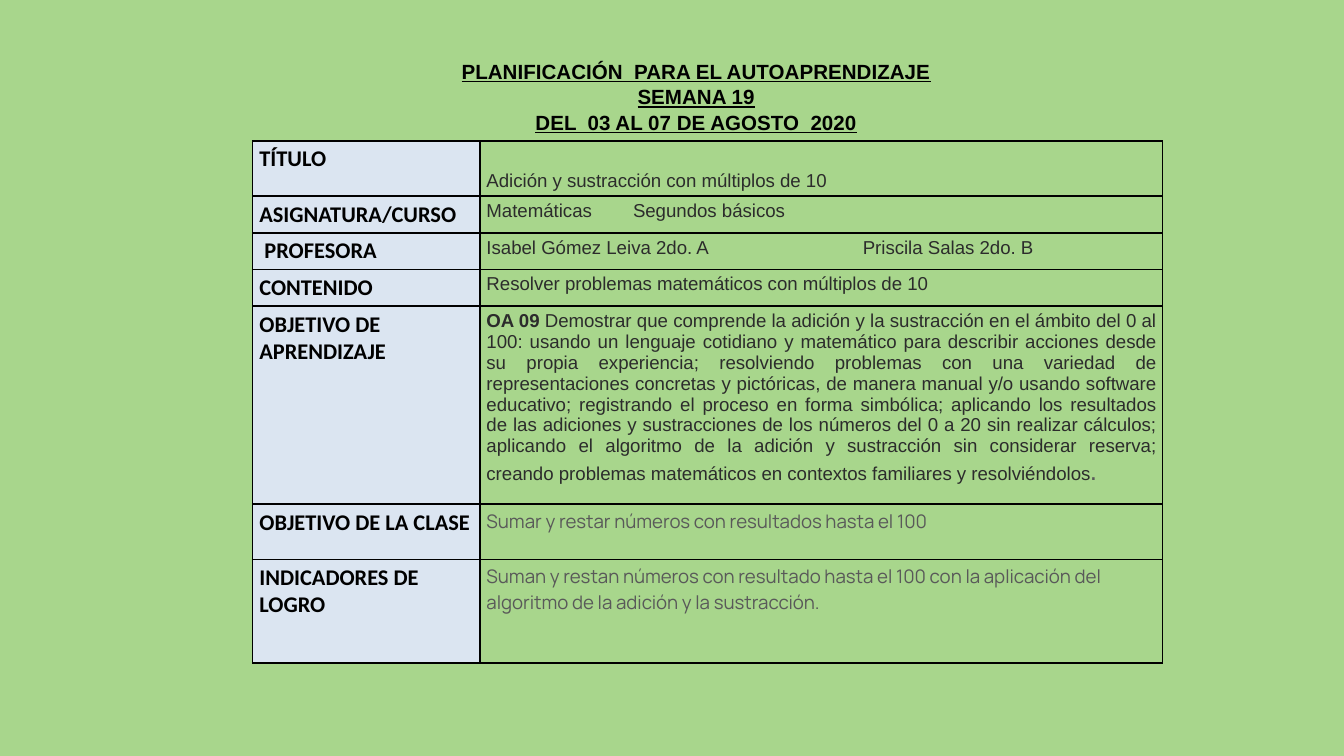
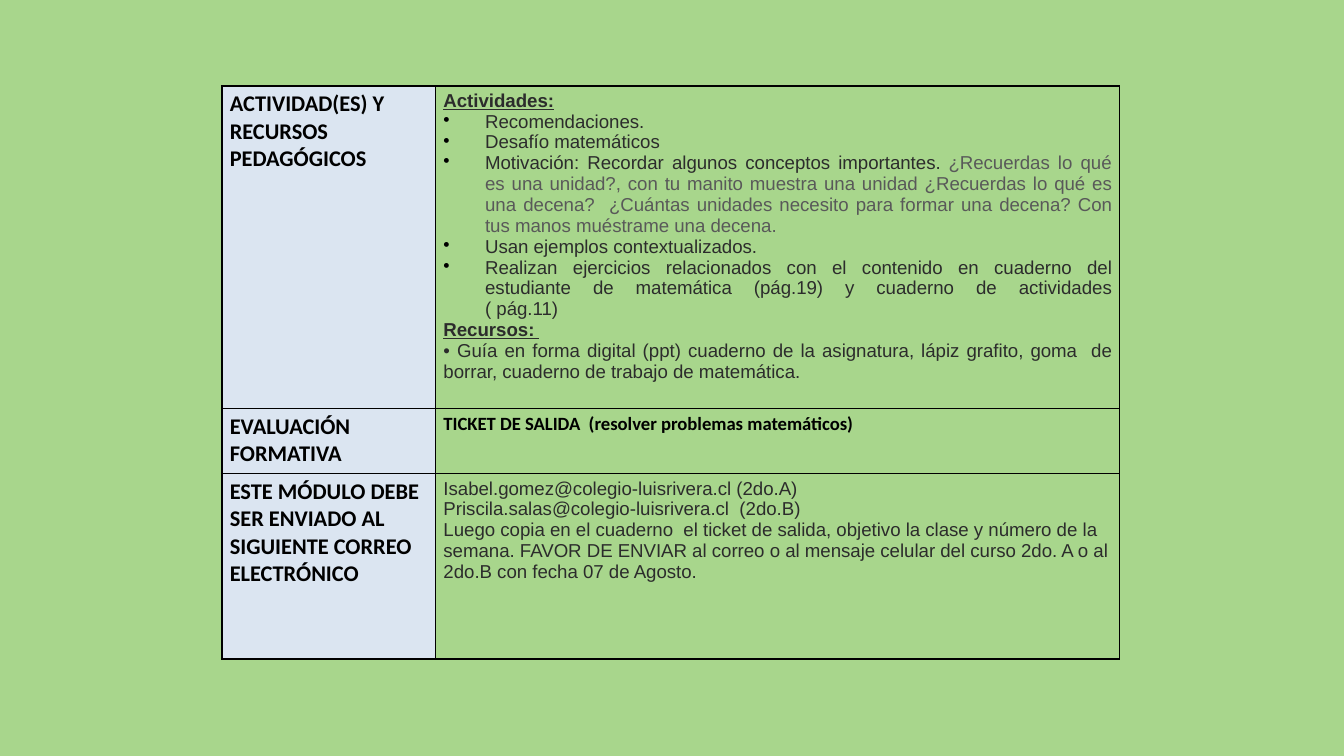
from pptx import Presentation
from pptx.dml.color import RGBColor
from pptx.enum.text import MSO_ANCHOR, MSO_AUTO_SIZE, PP_ALIGN
from pptx.oxml.ns import qn
from pptx.util import Inches, Pt
from lxml import etree

TOP, BOTTOM = MSO_ANCHOR.TOP, MSO_ANCHOR.BOTTOM
LEFT, CENTER, JUSTIFY = PP_ALIGN.LEFT, PP_ALIGN.CENTER, PP_ALIGN.JUSTIFY
NO_FIT = MSO_AUTO_SIZE.NONE
TITLE_ONLY, BLANK = 5, 6

# Shared colours and text formats
GREEN, PALE_BLUE, BLACK, DARK, GREY = "A8D68C", "DBE5F1", "000000", "2C2C2C", "595959"
TITLE = dict(name="Arial", size=11, color=BLACK, bold=True, underline=True)
LABEL = dict(name="Calibri", size=12, color=BLACK, bold=True)
BODY = dict(name="Arial", size=10, color=DARK, bold=False)
STRONG = {**BODY, "bold": True}
HEADING = {**STRONG, "underline": True}
MUTED = {**BODY, "color": GREY}
GOAL = {**MUTED, "name": "Manrope"}
TICKET = {**LABEL, "size": 10}

W, H = Inches(10), Inches(5.625)
BULLET_INDENT = Inches(0.31)


def rgb(color):
    return RGBColor.from_string(color)


def across(share):
    return round(W * share / 100)


def down(share):
    return round(H * share / 100)


def sub(parent, tag, **attrs):
    el = etree.SubElement(parent, qn(tag))
    for key, value in attrs.items():
        el.set(key, str(value))
    return el


def para(*runs, align=LEFT, bullet=False, tab=None):
    """Describe a paragraph; each run is a (text, format) pair."""
    return dict(runs=runs, align=align, bullet=bullet, tab=tab)


def add_run(p, text, fmt):
    for i, line in enumerate(text.split("\n")):
        if i:
            p.add_line_break()
        r = p.add_run()
        r.text = line
        for key, value in fmt.items():
            if key == "color":
                r.font.color.rgb = rgb(value)
            else:
                setattr(r.font, key, Pt(value) if key == "size" else value)


def write(tf, paras):
    for i, spec_p in enumerate(paras):
        p = tf.add_paragraph() if i else tf.paragraphs[0]
        p.alignment = spec_p["align"]
        pPr = p._p.get_or_add_pPr()
        if spec_p["bullet"]:
            pPr.set("marL", str(BULLET_INDENT))
            pPr.set("indent", str(-BULLET_INDENT))
            sub(sub(pPr, "a:buClr"), "a:srgbClr", val=BLACK)
            sub(pPr, "a:buChar", char="•")
        if spec_p["tab"]:
            sub(sub(pPr, "a:tabLst"), "a:tab", pos=Inches(spec_p["tab"]), algn="l")
        for text, fmt in spec_p["runs"]:
            add_run(p, text, fmt)


def add_slide(prs, layout):
    s = prs.slides.add_slide(prs.slide_layouts[layout])
    s.background.fill.solid()
    s.background.fill.fore_color.rgb = rgb(GREEN)
    return s


def set_title(s, text, left, top, width, height):
    sp = s.shapes.title
    sp.left, sp.top = across(left), down(top)
    sp.width, sp.height = across(width), down(height)
    tf = sp.text_frame
    tf.word_wrap, tf.auto_size, tf.vertical_anchor = True, NO_FIT, TOP
    tf.margin_top = tf.margin_bottom = Inches(0.05)
    write(tf, [para((text, TITLE), align=CENTER)])
    tf.paragraphs[0].line_spacing = 1.04


def format_cell(cell, paras, margin, fill=None, anchor=TOP):
    cell.margin_left = cell.margin_right = Inches(margin)
    cell.margin_top = cell.margin_bottom = Pt(2.5)
    cell.vertical_anchor = anchor
    tcPr = cell._tc.get_or_add_tcPr()
    for side in ("a:lnL", "a:lnR", "a:lnT", "a:lnB"):
        ln = sub(tcPr, side, w=Pt(1))
        sub(sub(ln, "a:solidFill"), "a:srgbClr", val=BLACK)
    if fill:
        cell.fill.solid()
        cell.fill.fore_color.rgb = rgb(fill)
    else:
        cell.fill.background()
    write(cell.text_frame, paras)


def add_plan_table(s, left, top, cols, rows, margin):
    """Rows are (height, label, paragraphs, anchor of the content)."""
    tbl = s.shapes.add_table(len(rows), len(cols), across(left), down(top),
                             across(sum(cols)), down(sum(r[0] for r in rows))).table
    tbl.first_row = tbl.horz_banding = False
    for col, width in zip(tbl.columns, cols):
        col.width = across(width)
    for i, (height, label, paras, anchor) in enumerate(rows):
        tbl.rows[i].height = down(height)
        format_cell(tbl.cell(i, 0), [para((label, LABEL))], margin, PALE_BLUE)
        format_cell(tbl.cell(i, 1), paras, margin, anchor=anchor)


def bullet(*runs):
    return para(*runs, align=JUSTIFY, bullet=True)


# Slide 1: title and lesson data
OBJECTIVE = (
    " Demostrar que comprende la adición y la sustracción en el ámbito del 0 al 100: "
    "usando un lenguaje cotidiano y matemático para describir acciones desde su propia "
    "experiencia; resolviendo problemas con una variedad de representaciones concretas y "
    "pictóricas, de manera manual y/o usando software educativo; registrando el proceso en "
    "forma simbólica; aplicando los resultados de las adiciones y sustracciones de los "
    "números del 0 a 20 sin realizar cálculos; aplicando el algoritmo de la adición y "
    "sustracción sin considerar reserva; creando problemas matemáticos en contextos "
    "familiares y resolviéndolos")

LESSON = [
    (7.3, "TÍTULO", [para(("Adición y sustracción con múltiplos de 10", BODY))], BOTTOM),
    (4.85, "ASIGNATURA/CURSO",
     [para(("Matemáticas\tSegundos básicos", BODY), tab=1.09)], TOP),
    (4.85, " PROFESORA",
     [para(("Isabel Gómez Leiva 2do. A\tPriscila Salas 2do. B", BODY), tab=2.8)], TOP),
    (4.85, "CONTENIDO",
     [para(("Resolver problemas matemáticos con múltiplos de 10", BODY))], TOP),
    (26.2, "OBJETIVO DE APRENDIZAJE",
     [para(("OA 09", STRONG), (OBJECTIVE, BODY),
           (".", {**MUTED, "size": 14}), align=JUSTIFY)], TOP),
    (7.3, "OBJETIVO DE LA CLASE",
     [para(("Sumar y restar números con resultados hasta el 100", GOAL))], TOP),
    (13.75, "INDICADORES DE LOGRO",
     [para(("Suman y restan números con resultado hasta el 100 con la aplicación del "
            "algoritmo de la adición y la sustracción.", GOAL))], TOP),
]

# Slide 2: activities, assessment and delivery
ACTIVITIES = [
    para(("Actividades:", HEADING), align=JUSTIFY),
    bullet(("Recomendaciones.", BODY)),
    bullet(("Desafío matemáticos", BODY)),
    bullet(("Motivación: Recordar algunos conceptos importantes. ", BODY),
           ("¿Recuerdas lo qué es una unidad?, con tu manito muestra una unidad "
            "¿Recuerdas lo qué es una decena?  ¿Cuántas unidades necesito para formar una "
            "decena? Con tus manos muéstrame una decena.", MUTED)),
    bullet(("Usan ejemplos contextualizados.", BODY)),
    bullet(("Realizan ejercicios relacionados con el contenido en cuaderno del estudiante "
            "de matemática (pág.19) y cuaderno de actividades\n( pág.11)", BODY)),
    para(("Recursos: ", HEADING), align=JUSTIFY),
    para(("• Guía en forma digital (ppt) cuaderno de la asignatura, lápiz grafito, goma  de "
          "borrar, cuaderno de trabajo de matemática.", BODY), align=JUSTIFY),
]

DELIVERY = [
    para(("Isabel.gomez@colegio-luisrivera.cl (2do.A)", BODY)),
    para(("Priscila.salas@colegio-luisrivera.cl  (2do.B)", BODY)),
    para(("Luego copia en el cuaderno  el ticket de salida, objetivo la clase y número de "
          "la semana. FAVOR DE ENVIAR al correo o al mensaje celular del curso 2do. A o al "
          "2do.B con fecha 07 de Agosto.", BODY)),
]

WORK = [
    (42.7, "ACTIVIDAD(ES) Y RECURSOS PEDAGÓGICOS", ACTIVITIES, TOP),
    (8.6, "EVALUACIÓN FORMATIVA",
     [para(("TICKET DE SALIDA  (resolver problemas matemáticos)", TICKET))], TOP),
    (24.5, "ESTE MÓDULO DEBE SER ENVIADO AL SIGUIENTE CORREO ELECTRÓNICO", DELIVERY, TOP),
]


def main():
    prs = Presentation()
    prs.slide_width, prs.slide_height = W, H

    s = add_slide(prs, TITLE_ONLY)
    set_title(s, "PLANIFICACIÓN  PARA EL AUTOAPRENDIZAJE\nSEMANA 19\n"
              "DEL  03 AL 07 DE AGOSTO  2020", 15.1, 6.75, 73.4, 11.75)
    add_plan_table(s, 18.8, 18.65, (16.9, 50.8), LESSON, 0.05)

    s = add_slide(prs, BLANK)
    add_plan_table(s, 16.5, 11.35, (15.9, 50.9), WORK, 0.06)

    prs.save("out.pptx")


if __name__ == "__main__":
    main()
